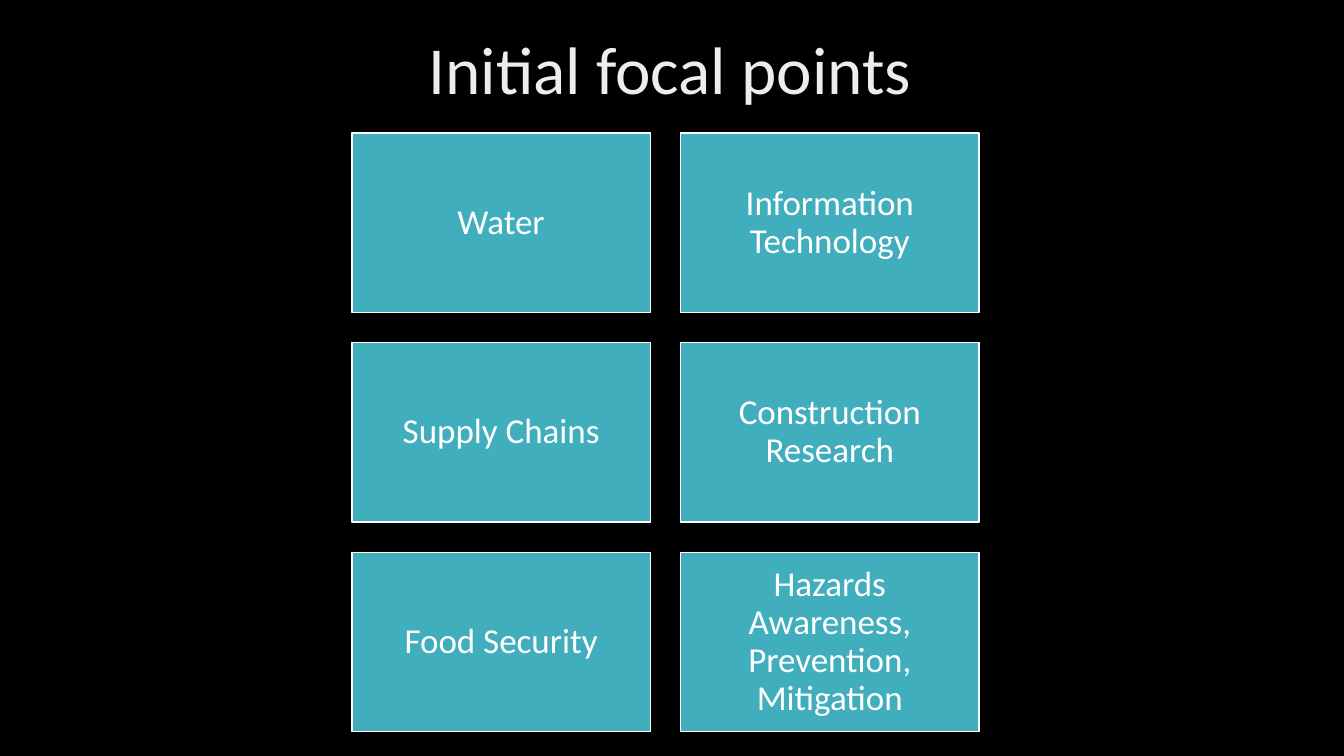
"""Build the "Initial focal points" slide: a title above a grid of topic tiles."""
from dataclasses import dataclass

from pptx import Presentation
from pptx import util as u
from pptx.dml.color import RGBColor
from pptx.enum import shapes, text
from pptx.shapes.autoshape import Shape
from pptx.slide import Slide

PX = 9144
FONT = "Calibri"
WHITE = "FFFFFF"
COLUMNS = 2
GRID_LEFT, GRID_TOP = 349, 132
TILE_WIDTH, TILE_HEIGHT = 296, 178
COLUMN_GAP, ROW_GAP = 30, 30
TOPICS = [
    "Water",
    "Information Technology",
    "Supply Chains",
    "Construction Research",
    "Food Security",
    "Hazards Awareness, Prevention, Mitigation",
]


@dataclass(frozen=True)
class Box:
    left: int
    top: int
    width: int
    height: int

    def emu(self) -> list[u.Emu]:
        return [u.Emu(length * PX) for length in (self.left, self.top, self.width, self.height)]


@dataclass(frozen=True)
class Tile:
    label: str
    box: Box


def color(value: str) -> RGBColor:
    return RGBColor.from_string(value)


def tile_at(index: int, label: str) -> Tile:
    row, column = divmod(index, COLUMNS)
    left = GRID_LEFT + column * (TILE_WIDTH + COLUMN_GAP)
    top = GRID_TOP + row * (TILE_HEIGHT + ROW_GAP)
    return Tile(label, Box(left, top, TILE_WIDTH, TILE_HEIGHT))


def write_text(shape: Shape, wording: str, size: int, font_color: str) -> None:
    frame = shape.text_frame
    frame.word_wrap = True
    frame.vertical_anchor = text.MSO_ANCHOR.MIDDLE
    frame.margin_left = frame.margin_right = u.Emu(10 * PX)
    frame.margin_top = frame.margin_bottom = u.Emu(10 * PX)
    paragraph = frame.paragraphs[0]
    paragraph.text = wording
    paragraph.alignment = text.PP_ALIGN.CENTER
    paragraph.line_spacing = 0.9
    paragraph.font.name = FONT
    paragraph.font.size = u.Pt(size)
    paragraph.font.color.rgb = color(font_color)


def add_title(slide: Slide, wording: str, box: Box) -> None:
    shape = slide.shapes.add_textbox(*box.emu())
    write_text(shape, wording, 48, "EDEDED")


def add_tile(slide: Slide, tile: Tile) -> None:
    shape = slide.shapes.add_shape(shapes.MSO_SHAPE.RECTANGLE, *tile.box.emu())
    shape.shadow.inherit = False
    shape.fill.solid()
    shape.fill.fore_color.rgb = color("41AEBD")
    shape.line.color.rgb = color(WHITE)
    shape.line.width = u.Pt(1)
    write_text(shape, tile.label, 25, WHITE)


def main() -> None:
    presentation = Presentation()
    presentation.slide_width = u.Emu(1333 * PX)
    presentation.slide_height = u.Emu(750 * PX)
    slide = presentation.slides.add_slide(presentation.slide_layouts[6])
    slide.background.fill.solid()
    slide.background.fill.fore_color.rgb = color("000000")
    add_title(slide, "Initial focal points", Box(314, 10, 701, 125))
    for index, label in enumerate(TOPICS):
        add_tile(slide, tile_at(index, label))
    presentation.save("out.pptx")


if __name__ == "__main__":
    main()
